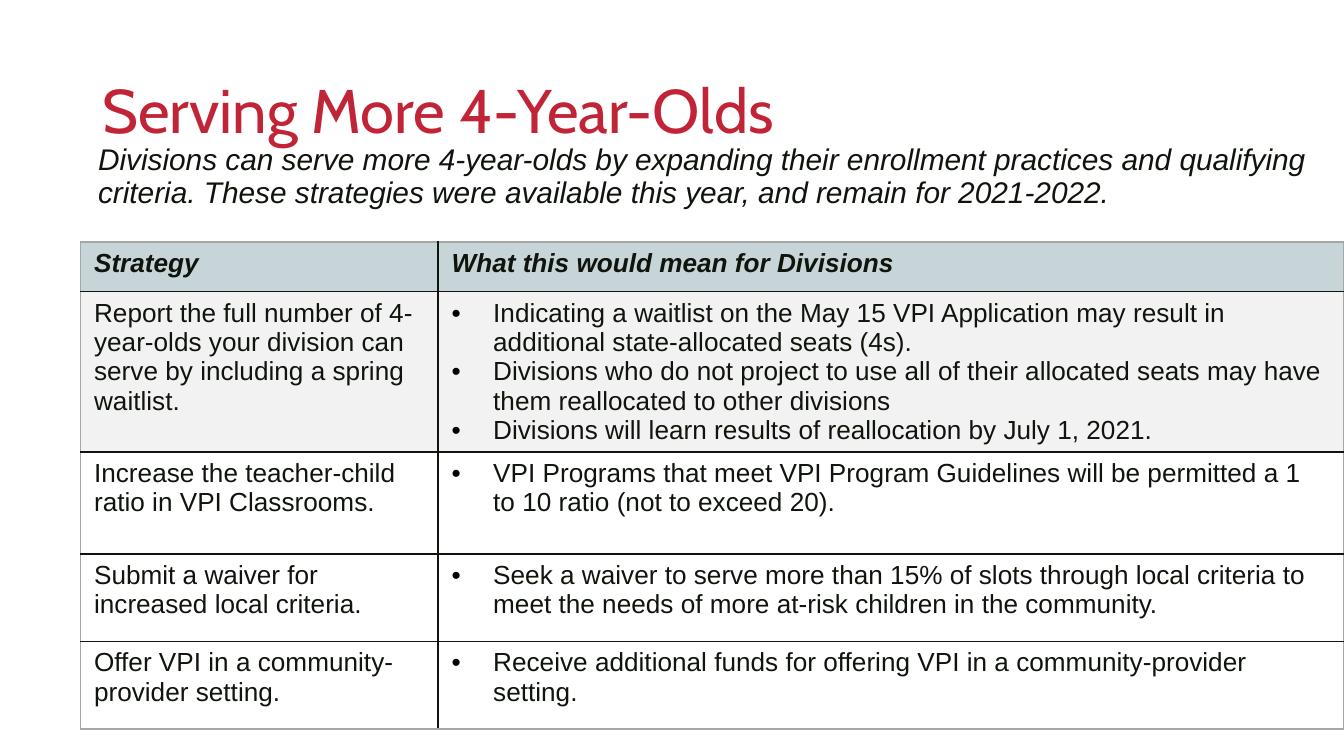
from dataclasses import dataclass

from lxml import etree
from pptx import Presentation
from pptx.dml.color import RGBColor
from pptx.enum.text import MSO_ANCHOR, MSO_AUTO_SIZE, PP_ALIGN
from pptx.oxml.ns import qn
from pptx.util import Inches, Pt

LEFT = PP_ALIGN.LEFT
TOP, MIDDLE = MSO_ANCHOR.TOP, MSO_ANCHOR.MIDDLE
NO_FIT = MSO_AUTO_SIZE.NONE
COLORS = {
    "title": "C12436", "text": "0F150D", "bullet": "000000", "edge": "A6A6A6",
    "head": "C7D4D8", "shade": "F2F2F2", "plain": "FFFFFF",
}
COLS = (2.66, 6.74)


@dataclass
class Row:
    height: float
    fill: str
    label: str
    points: tuple[str, ...]
    head: bool = False


ROWS = (
    Row(0.37, "head", "Strategy", ("What this would mean for Divisions",), True),
    Row(1.19, "shade",
        "Report the full number of 4-year-olds your division can serve "
        "by including a spring waitlist.",
        ("Indicating a waitlist on the May 15 VPI Application may result in "
         "additional state-allocated seats (4s).",
         "Divisions who do not project to use all of their allocated seats "
         "may have them reallocated to other divisions",
         "Divisions will learn results of reallocation by July 1, 2021.")),
    Row(0.76, "plain", "Increase the teacher-child ratio in VPI Classrooms.",
        ("VPI Programs that meet VPI Program Guidelines will be permitted "
         "a 1 to 10 ratio (not to exceed 20).",)),
    Row(0.65, "plain", "Submit a waiver for increased local criteria.",
        ("Seek a waiver to serve more than 15% of slots through local criteria "
         "to meet the needs of more at-risk children in the community.",)),
    Row(0.65, "plain", "Offer VPI in a community-provider setting.",
        ("Receive additional funds for offering VPI in a community-provider "
         "setting.",)),
)


def rgb(name: str) -> RGBColor:
    return RGBColor.from_string(COLORS[name])


def style(para, size: float, color: str = "text", face: str = "Arial",
          bold: bool = False, italic: bool = False) -> None:
    font = para.font
    font.name, font.size, font.bold, font.italic = face, Pt(size), bold, italic
    font.color.rgb = rgb(color)


def indent(para, left: float, first: float, bullet: str = "") -> None:
    """Set the indents in inches, and the bullet or its absence."""
    props = para._p.get_or_add_pPr()
    props.set("marL", str(Inches(left)))
    props.set("indent", str(Inches(first)))
    if bullet:
        tone = etree.SubElement(props, qn("a:buClr"))
        etree.SubElement(tone, qn("a:srgbClr"), val=COLORS["bullet"])
        etree.SubElement(props, qn("a:buFont"), typeface="Arial")
        etree.SubElement(props, qn("a:buChar"), char=bullet)
    else:
        etree.SubElement(props, qn("a:buNone"))


def place(shape, box: tuple[float, ...], text: str, anchor):
    """Move a placeholder, fill it and return its paragraph."""
    shape.left, shape.top, shape.width, shape.height = map(Inches, box)
    frame = shape.text_frame
    frame.text = text
    frame.word_wrap, frame.auto_size = True, NO_FIT
    frame.vertical_anchor = anchor
    frame.margin_left = frame.margin_right = Inches(0.07)
    frame.margin_top = frame.margin_bottom = Inches(0.04)
    para = frame.paragraphs[0]
    para.alignment, para.line_spacing, para.space_before = LEFT, 0.9, Pt(0)
    return para


def border(cell, sides: dict[str, str]) -> None:
    """Draw the cell's sides; they go ahead of its fill."""
    props = cell._tc.get_or_add_tcPr()
    for spot, (side, color) in enumerate(sides.items()):
        line = etree.Element(qn(f"a:ln{side}"), w=str(Pt(1)))
        fill = etree.SubElement(line, qn("a:solidFill"))
        etree.SubElement(fill, qn("a:srgbClr"), val=COLORS[color])
        props.insert(spot, line)


def write(cell, lines: tuple[str, ...], row: Row, listed: bool) -> None:
    cell.text = "\n".join(lines)
    cell.fill.solid()
    cell.fill.fore_color.rgb = rgb(row.fill)
    for para in cell.text_frame.paragraphs:
        if listed:
            indent(para, 0.31, -0.31, "•")
        style(para, 14, bold=row.head, italic=row.head)


def draw_table(slide) -> None:
    frame = slide.shapes.add_table(
        len(ROWS), len(COLS), Inches(0.6), Inches(1.8),
        Inches(sum(COLS)), Inches(sum(row.height for row in ROWS)))
    table = frame.table
    table.horz_banding = False
    for col, width in zip(table.columns, COLS):
        col.width = Inches(width)
    last = len(ROWS) - 1
    for i, row in enumerate(ROWS):
        table.rows[i].height = Inches(row.height)
        for j, lines in enumerate(((row.label,), row.points)):
            cell = table.cell(i, j)
            write(cell, lines, row, j == 1 and not row.head)
            border(cell, {
                "L": "text" if j else "edge",
                "R": "edge" if j else "text",
                "T": "text" if i else "edge",
                "B": "text" if i < last else "edge",
            })


def main() -> None:
    deck = Presentation()
    deck.slide_width = Inches(10)
    deck.slide_height = deck.slide_width * 9 // 16
    slide = deck.slides.add_slide(deck.slide_layouts[1])
    title = place(slide.shapes.title, (0.69, 0.3, 8.62, 1.09),
                  "Serving More 4-Year-Olds", MIDDLE)
    style(title, 33, "title", "Cabin")
    intro = place(
        slide.placeholders[1], (0.51, 1.04, 9.4, 3.57),
        "Divisions can serve more 4-year-olds by expanding their enrollment "
        "practices and qualifying criteria. These strategies were available "
        "this year, and remain for 2021-2022.", TOP)
    indent(intro, 0.15, 0)
    style(intro, 16, italic=True)
    draw_table(slide)
    deck.save("out.pptx")


if __name__ == "__main__":
    main()
